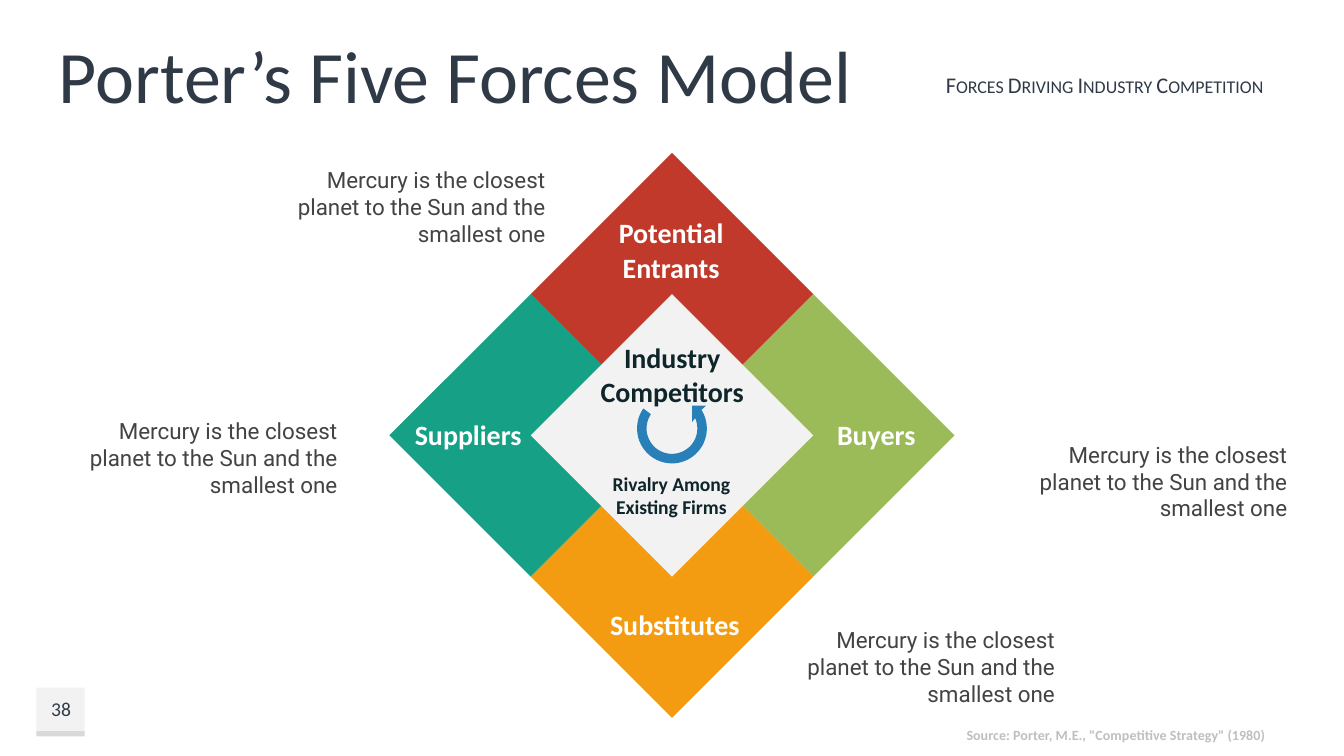
from math import cos, radians, sin

from pptx import Presentation
from pptx.dml.color import RGBColor
from pptx.enum.shapes import MSO_SHAPE as Shape
from pptx.enum.text import MSO_ANCHOR as Anchor, PP_ALIGN as Align
from pptx.util import Cm, Pt

COLORS = {
    "slate": "2F3A46", "ink": "0E252A", "body": "434343", "white": "FFFFFF",
    "light": "F2F2F2", "rule": "D9D9D9", "source": "BFBFBF", "red": "C0392B",
    "teal": "16A085", "green": "9BBB59", "orange": "F39C12", "blue": "2980B9",
}
CENTER_X, CENTER_Y, HALF = 12.7, 8.23, 2.67
BODY = "Mercury is the closest planet to the Sun and the smallest one"


class ForcesSlide:
    """Draws styled elements on one slide, with lengths in centimetres."""

    def __init__(self, presentation):
        self.slide = presentation.slides.add_slide(presentation.slide_layouts[5])
        self.shapes = self.slide.shapes
        self.font = "Calibri"

    def color(self, name):
        return RGBColor.from_string(COLORS[name])

    def paint(self, shape, fill):
        shape.shadow.inherit = False
        shape.fill.solid()
        shape.fill.fore_color.rgb = self.color(fill)
        shape.line.fill.background()

    def rectangle(self, left, top, width, height, fill):
        box = (Cm(length) for length in (left, top, width, height))
        self.paint(self.shapes.add_shape(Shape.RECTANGLE, *box), fill)

    def outline(self, points, fill):
        corners = [(Cm(x), Cm(y)) for x, y in points]
        builder = self.shapes.build_freeform(*corners[0])
        builder.add_line_segments(corners[1:], close=True)
        self.paint(builder.convert_to_shape(), fill)

    def diamond(self, x, y, fill):
        self.outline([(x, y - HALF), (x + HALF, y), (x, y + HALF), (x - HALF, y)], fill)

    def cycle_arrow(self, x, y, outer, inner, fill):
        def arc(radius, start, end):
            angles = [radians(start + (end - start) * step / 40) for step in range(41)]
            return [(x + radius * cos(angle), y + radius * sin(angle)) for angle in angles]

        head = [(x + 0.38, y - 0.43), (x + 0.64, y - 0.43)]
        ring = arc(outer, -32, 215) + arc(inner, 214, -24)
        self.outline(head + ring + [(x + 0.38, y - 0.12)], fill)

    def set_text(self, shape, text, size, color, align, anchor, bold=False, font=None):
        frame = shape.text_frame
        frame.text = text
        frame.vertical_anchor = anchor
        paragraph = frame.paragraphs[0]
        paragraph.alignment = align
        paragraph.font.name = font or self.font
        paragraph.font.size = Pt(size)
        paragraph.font.bold = bold
        paragraph.font.color.rgb = self.color(color)
        return paragraph

    def title(self, text, left, top, width, height):
        shape = self.shapes.title
        shape.left, shape.top = Cm(left), Cm(top)
        shape.width, shape.height = Cm(width), Cm(height)
        self.set_text(shape, text, 39.6, "slate", Align.LEFT, Anchor.MIDDLE)

    def text(self, text, box, size, color, align=Align.CENTER, anchor=Anchor.TOP,
             wrap=True, **style):
        shape = self.shapes.add_textbox(*(Cm(length) for length in box))
        shape.text_frame.word_wrap = wrap
        return self.set_text(shape, text, size, color, align, anchor, **style)

    def description(self, left, top):
        self.text(BODY, (left, top, 5.23, 2.13), 12, "body", Align.RIGHT,
                  Anchor.MIDDLE, font="Roboto")


def main():
    presentation = Presentation()
    presentation.slide_width, presentation.slide_height = Cm(25.4), Cm(14.29)
    slide = ForcesSlide(presentation)

    slide.rectangle(0.69, 13, 0.91, 0.91, "light")
    slide.rectangle(0.69, 13.82, 0.91, 0.1, "rule")
    slide.title("Porter’s Five Forces Model", 0.86, 0.74, 16.03, 1.3)
    subtitle = slide.text("Forces Driving Industry Competition", (8.1, 1.3, 16.03, 0.61),
                          12, "slate", Align.RIGHT, Anchor.MIDDLE)
    subtitle.runs[0].font._element.set("cap", "small")
    slide.text("38", (0.56, 13, 1.19, 0.81), 10.5, "slate", anchor=Anchor.MIDDLE)
    slide.text('Source: Porter, M.E., "Competitive Strategy" (1980)',
               (17.96, 13.61, 6.2, 0.58), 7.5, "source", Align.RIGHT, wrap=False, bold=True)

    for column, row, fill in ((0, -1, "red"), (-1, 0, "teal"), (1, 0, "green"),
                              (0, 1, "orange"), (0, 0, "light")):
        slide.diamond(CENTER_X + column * HALF, CENTER_Y + row * HALF, fill)

    slide.text("Industry Competitors", (10.62, 6.32, 4.17, 4.17), 15, "ink", bold=True)
    slide.text("Rivalry Among Existing Firms", (11.05, 8.79, 3.28, 1.14), 10.5, "ink", bold=True)
    slide.cycle_arrow(CENTER_X, 8.1, 0.66, 0.48, "blue")

    for force, left, top, width in (("Suppliers", 7.59, 7.77, 2.54),
                                    ("Buyers", 15.57, 7.77, 2.01),
                                    ("Substitutes", 11.28, 11.35, 3)):
        slide.text(force, (left, top, width, 0.89), 15, "white", Align.LEFT,
                   wrap=False, bold=True)
    entrants = slide.text("Potential Entrants", (11.07, 3.91, 3.23, 1.6), 15, "white",
                          anchor=Anchor.MIDDLE, bold=True)
    entrants.line_spacing = Pt(18.8)

    for left, top in ((5.33, 2.84), (1.4, 7.59), (14.96, 11.53), (19.35, 8.03)):
        slide.description(left, top)

    presentation.save("out.pptx")


if __name__ == "__main__":
    main()
